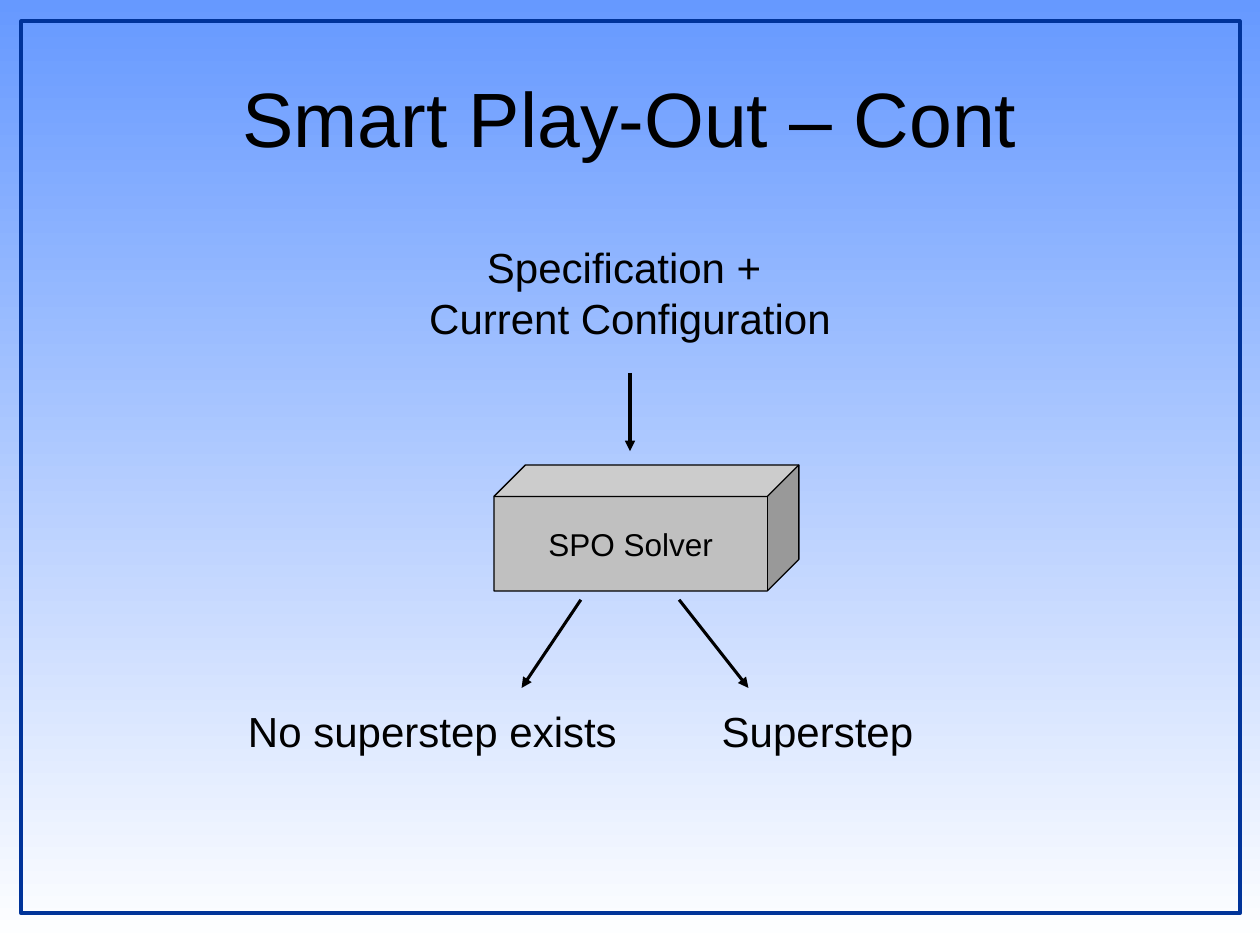
"""Build the Smart Play-Out slide on a grid of 100 columns by 75 rows."""
from typing import NamedTuple

from lxml.etree import SubElement
from pptx import Presentation
from pptx.dml.color import RGBColor
from pptx.enum.shapes import MSO_CONNECTOR, MSO_SHAPE
from pptx.enum.text import MSO_ANCHOR, MSO_AUTO_SIZE, PP_ALIGN
from pptx.oxml.ns import qn
from pptx.util import Inches, Pt

HUES = {"sky": "6699FF", "white": "FFFFFF", "frame": "003399",
        "ink": "000000", "cube": "C0C0C0"}
CELL = Inches(0.1)


class Box(NamedTuple):
    col: float
    row: float
    wide: float
    high: float


class Label(NamedTuple):
    text: str
    box: Box
    align: PP_ALIGN
    wrap: bool


class Arrow(NamedTuple):
    col: float
    row: float
    to_col: float
    to_row: float


LABELS = [
    Label("Specification + \nCurrent Configuration",
          Box(32.8, 18.7, 34.4, 9.1), PP_ALIGN.CENTER, True),
    Label("No superstep exists", Box(18.7, 55.5, 31.6, 5), PP_ALIGN.LEFT, False),
    Label("Superstep", Box(56.3, 55.5, 17.4, 5), PP_ALIGN.LEFT, False),
]
ARROWS = [Arrow(50, 29.6, 50, 35.8), Arrow(46.1, 47.6, 41.4, 54.6),
          Arrow(53.9, 47.6, 59.4, 54.6)]


def hue(name: str) -> RGBColor:
    return RGBColor.from_string(HUES[name])


def grid(*cells: float) -> list[int]:
    return [round(n * CELL) for n in cells]


def write(frame, text: str, size: int, align: PP_ALIGN) -> None:
    frame.text = text
    for para in frame.paragraphs:
        para.alignment = align
        for run in para.runs:
            run.font.name = "Arial"
            run.font.size = Pt(size)
            run.font.color.rgb = hue("ink")


def paint(slide) -> None:
    fill = slide.background.fill
    fill.gradient()
    fill.gradient_angle = 270
    for stop, name in zip(fill.gradient_stops, ("sky", "white")):
        stop.color.rgb = hue(name)


def add_solid(slide, kind: MSO_SHAPE, box: Box, line: str, width: float):
    shape = slide.shapes.add_shape(kind, *grid(*box))
    shape.shadow.inherit = False
    shape.fill.background()
    shape.line.color.rgb = hue(line)
    shape.line.width = Pt(width)
    return shape


def add_title(slide, text: str, box: Box) -> None:
    title = slide.shapes.title
    title.left, title.top, title.width, title.height = grid(*box)
    title.text_frame.vertical_anchor = MSO_ANCHOR.MIDDLE
    write(title.text_frame, text, 44, PP_ALIGN.CENTER)


def add_cube(slide, text: str, box: Box) -> None:
    cube = add_solid(slide, MSO_SHAPE.CUBE, box, "ink", 0.75)
    cube.fill.solid()
    cube.fill.fore_color.rgb = hue("cube")
    cube.text_frame.word_wrap = False
    cube.text_frame.vertical_anchor = MSO_ANCHOR.MIDDLE
    write(cube.text_frame, text, 18, PP_ALIGN.CENTER)


def add_label(slide, label: Label) -> None:
    frame = slide.shapes.add_textbox(*grid(*label.box)).text_frame
    frame.word_wrap = label.wrap
    frame.auto_size = MSO_AUTO_SIZE.SHAPE_TO_FIT_TEXT
    write(frame, label.text, 24, label.align)


def add_arrow(slide, arrow: Arrow) -> None:
    link = slide.shapes.add_connector(MSO_CONNECTOR.STRAIGHT, *grid(*arrow))
    link.line.color.rgb = hue("ink")
    link.line.width = Pt(1.75)
    SubElement(link.line._get_or_add_ln(), qn("a:tailEnd"), type="triangle")
    SubElement(link._element.spPr, qn("a:effectLst"))


def main() -> None:
    deck = Presentation()
    deck.slide_width, deck.slide_height = grid(100, 75)
    slide = deck.slides.add_slide(deck.slide_layouts[5])
    paint(slide)
    add_solid(slide, MSO_SHAPE.RECTANGLE, Box(1.7, 1.7, 96.7, 70.8), "frame", 2.25)
    add_title(slide, "Smart Play-Out – Cont", Box(5, 3, 90, 12.5))
    add_cube(slide, "SPO Solver", Box(39.2, 36.9, 24.2, 10))
    for label in LABELS:
        add_label(slide, label)
    for arrow in ARROWS:
        add_arrow(slide, arrow)
    deck.save("out.pptx")


if __name__ == "__main__":
    main()
